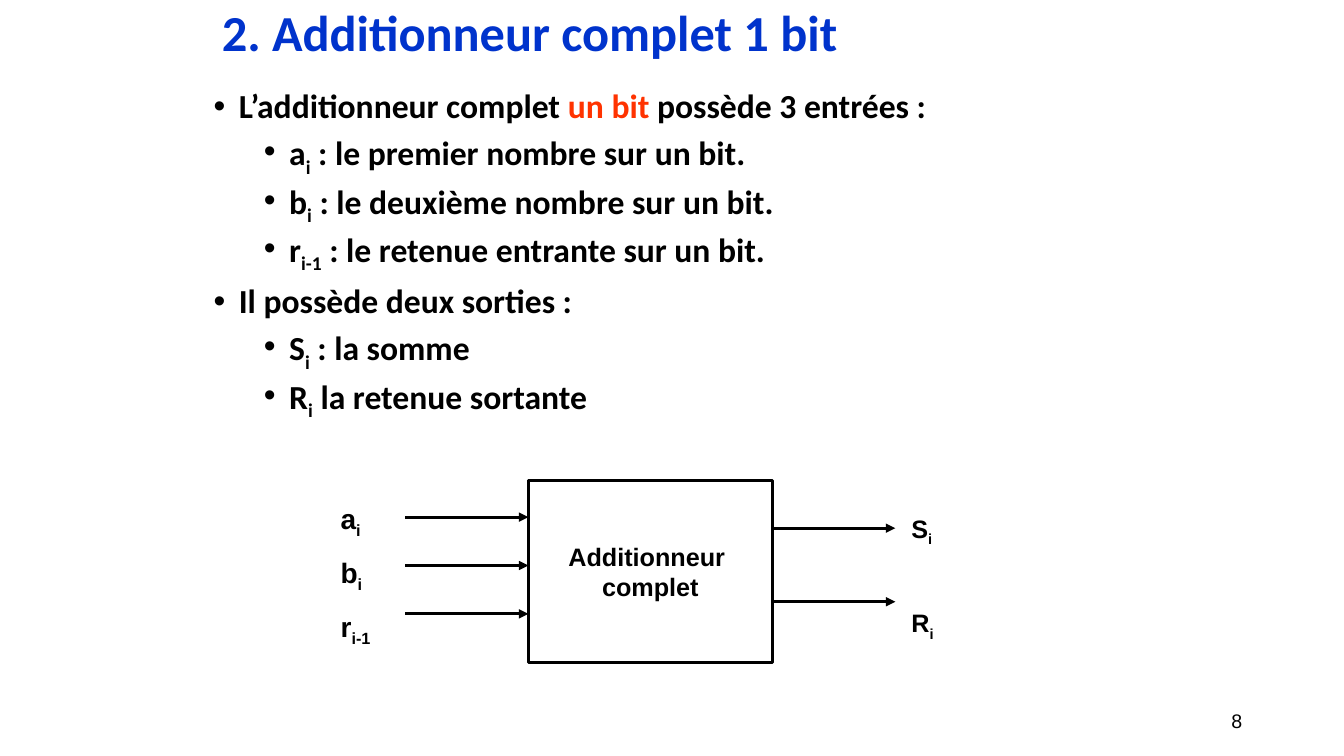
from lxml import etree
from pptx import Presentation
from pptx.dml.color import RGBColor
from pptx.enum.dml import MSO_FILL
from pptx.enum.shapes import MSO_CONNECTOR, MSO_SHAPE
from pptx.enum.text import MSO_ANCHOR, MSO_AUTO_SIZE, PP_ALIGN
from pptx.oxml.ns import qn
from pptx.util import Inches, Pt

LEFT, CENTER, RIGHT, JUSTIFY = PP_ALIGN.LEFT, PP_ALIGN.CENTER, PP_ALIGN.RIGHT, PP_ALIGN.JUSTIFY
TOP, MIDDLE = MSO_ANCHOR.TOP, MSO_ANCHOR.MIDDLE
RECTANGLE, STRAIGHT = MSO_SHAPE.RECTANGLE, MSO_CONNECTOR.STRAIGHT
NO_AUTOFIT = MSO_AUTO_SIZE.NONE
COLORS = {"text": "000000", "title": "0033CC", "accent": "FF3300"}
LINE_WIDTH = Pt(2.25)
BLOCK_LEFT, BLOCK_WIDTH = 5.24, 2.42
ARROW_LENGTH = 1.22


def color(name):
    """Return the RGB colour of a named entry."""
    return RGBColor.from_string(COLORS[name])


def signal(letter, index, rest=""):
    """Return the runs of a signal name with its subscript index."""
    return [(letter, {}), (index, {"subscript": True}), (rest, {})]


def add_run(paragraph, text, size, font="Arial", bold=True, fill="text", subscript=False):
    """Add one formatted run to a paragraph."""
    run = paragraph.add_run()
    run.text = text
    run.font.name = font
    run.font.size = Pt(size)
    run.font.bold = bold
    run.font.color.rgb = color(fill)
    if subscript:
        run._r.get_or_add_rPr().set("baseline", "-25000")


def write_text(shape, paragraphs, anchor=TOP, align=LEFT, wrap=True, line_spacing=1.0,
               gap=0, **run_format):
    """Write paragraphs, each a string or a list of runs, into a shape."""
    frame = shape.text_frame
    frame.auto_size = NO_AUTOFIT
    frame.word_wrap = wrap
    frame.vertical_anchor = anchor
    for number, content in enumerate(paragraphs):
        paragraph = frame.add_paragraph() if number else frame.paragraphs[0]
        paragraph.alignment = align
        paragraph.line_spacing = line_spacing
        paragraph.space_before = Pt(gap if number else 0)
        runs = [(content, {})] if isinstance(content, str) else content
        for text, changes in runs:
            if text:
                add_run(paragraph, text, **{**run_format, **changes})


def add_text(slide, left, top, width, height, paragraphs, **text_format):
    """Add a text box holding the given paragraphs."""
    box = slide.shapes.add_textbox(Inches(left), Inches(top), Inches(width), Inches(height))
    write_text(box, paragraphs, **text_format)
    return box


def add_title(slide, text):
    """Place and fill the title placeholder."""
    title = slide.shapes.title
    title.left, title.top, title.width, title.height = (
        Inches(value) for value in (2.1, 0, 9, 0.69))
    write_text(title, [text], anchor=MIDDLE, line_spacing=0.9, size=36,
               font="Calibri", fill="title")


def set_bullet(paragraph, level):
    """Give a paragraph its bullet, indent and spacing for a list level."""
    paragraph.level = level
    paragraph.space_before = Pt(5 if level else 10)
    properties = paragraph._p.get_or_add_pPr()
    properties.set("marL", str(Inches(0.25 + 0.5 * level)))
    properties.set("indent", str(Inches(-0.25)))
    etree.SubElement(properties, qn("a:buFont")).set("typeface", "Arial")
    etree.SubElement(properties, qn("a:buChar")).set("char", "•")


def add_bullets(slide, items):
    """Add the two-level list from pairs of level and content."""
    box = add_text(slide, 2.02, 0.84, 9, 3.5, [content for _, content in items],
                   align=JUSTIFY, line_spacing=0.9, size=24, font="Calibri")
    for paragraph, (level, _) in zip(box.text_frame.paragraphs, items):
        set_bullet(paragraph, level)


def add_block(slide, lines):
    """Add the outlined block of the adder."""
    block = slide.shapes.add_shape(RECTANGLE, Inches(BLOCK_LEFT), Inches(4.77),
                                   Inches(BLOCK_WIDTH), Inches(1.8))
    block.shadow.inherit = False
    block.fill.background()
    block.line.color.rgb = color("text")
    block.line.width = LINE_WIDTH
    write_text(block, lines, anchor=MIDDLE, align=CENTER, wrap=False, size=18)


def add_arrow(slide, left, y):
    """Add a horizontal arrow pointing right."""
    arrow = slide.shapes.add_connector(STRAIGHT, Inches(left), Inches(y),
                                       Inches(left + ARROW_LENGTH), Inches(y))
    arrow.line.color.rgb = color("text")
    arrow.line.width = LINE_WIDTH
    etree.SubElement(arrow.line._get_or_add_ln(), qn("a:tailEnd")).set("type", "triangle")
    etree.SubElement(arrow._element.spPr, qn("a:effectLst"))


def main():
    """Build the slide and save the presentation."""
    presentation = Presentation()
    presentation.slide_width, presentation.slide_height = Inches(13.33), Inches(7.5)
    slide = presentation.slides.add_slide(presentation.slide_layouts[5])
    add_title(slide, "2. Additionneur complet 1 bit")
    add_bullets(slide, [
        (0, [("L’additionneur complet ", {}), ("un bit", {"fill": "accent"}),
             (" possède 3 entrées : ", {})]),
        (1, signal("a", "i", " : le premier nombre sur un bit.")),
        (1, signal("b", "i", " : le deuxième nombre sur un bit.")),
        (1, signal("r", "i-1", " : le retenue entrante sur un bit.")),
        (0, "Il possède deux sorties :"),
        (1, signal("S", "i", " : la somme")),
        (1, signal("R", "i", " la retenue sortante")),
    ])
    add_block(slide, ["Additionneur ", "complet"])
    for y in (5.13, 5.61, 6.09):
        add_arrow(slide, BLOCK_LEFT - ARROW_LENGTH, y)
    for y in (5.24, 5.97):
        add_arrow(slide, BLOCK_LEFT + BLOCK_WIDTH, y)
    add_text(slide, 3.28, 4.93, 0.93, 1.89,
             [signal("a", "i"), signal("b", "i"), signal("r", "i-1")], gap=11, size=20)
    add_text(slide, 8.94, 5.04, 0.95, 1.15,
             [signal("S", "i"), signal("R", "i")], gap=43, size=18)
    add_text(slide, 9.42, 6.95, 3, 0.4, ["8"], anchor=MIDDLE, align=RIGHT,
             size=14, bold=False)
    presentation.save("out.pptx")


if __name__ == "__main__":
    main()
